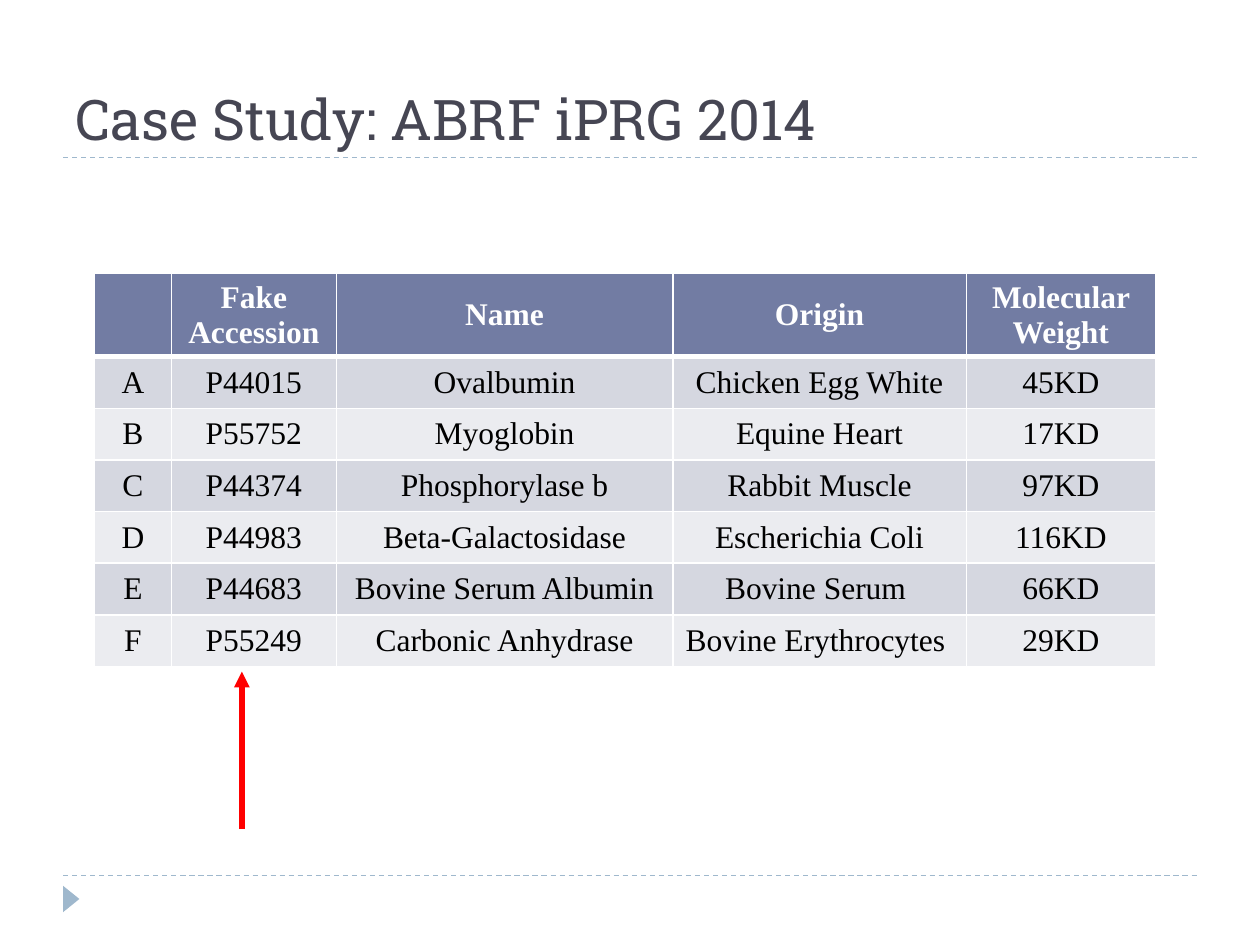
"""Builds the case study slide with its protein table."""
import pptx
import pptx.util
import pptx.dml.color
import pptx.enum.dml
import pptx.enum.shapes
import pptx.enum.text
import pptx.oxml.ns
import lxml.etree

Inches, Pt = pptx.util.Inches, pptx.util.Pt
qn = pptx.oxml.ns.qn
PP, MSO = pptx.enum.text.PP_ALIGN, pptx.enum.text.MSO_ANCHOR


def rgb(value):
    return pptx.dml.color.RGBColor.from_string(value)


def write(tf, text, size=18, font="Times New Roman", color="000000", bold=False, align=PP.CENTER):
    tf.word_wrap = True
    p = tf.paragraphs[0]
    p.alignment = align
    r = p.add_run()
    r.text = text
    r.font.size = Pt(size)
    r.font.name = font
    r.font.bold = bold
    r.font.color.rgb = rgb(color)


prs = pptx.Presentation()
prs.slide_width, prs.slide_height = Inches(10), Inches(7.5)
s = prs.slides.add_slide(prs.slide_layouts[6])

lines = [
    (0.5, 6.95, 9.5, 6.95, "9FB8CD", 0.75),
    (0.5, 1.25, 9.5, 1.25, "9FB8CD", 0.75),
    (1.92, 6.58, 1.92, 5.33, "FF0000", 3),
]
for x1, y1, x2, y2, color, width in lines:
    cn = s.shapes.add_connector(
        pptx.enum.shapes.MSO_CONNECTOR.STRAIGHT, Inches(x1), Inches(y1), Inches(x2), Inches(y2)
    )
    cn.line.color.rgb = rgb(color)
    cn.line.width = Pt(width)
    spPr = cn._element.spPr
    if y1 == y2:
        cn.line.dash_style = pptx.enum.dml.MSO_LINE.DASH
    else:
        lxml.etree.SubElement(spPr.find(qn("a:ln")), qn("a:tailEnd"), type="triangle")
    lxml.etree.SubElement(spPr, qn("a:effectLst"))

sp = s.shapes.add_shape(
    pptx.enum.shapes.MSO_SHAPE.ISOSCELES_TRIANGLE, Inches(0.46), Inches(7.07), Inches(0.21), Inches(0.13)
)
sp.rotation = 90
sp.shadow.inherit = False
sp.fill.solid()
sp.fill.fore_color.rgb = rgb("9FB8CD")
sp.line.fill.background()

title = s.shapes.add_textbox(Inches(0.5), Inches(0.17), Inches(9), Inches(1.08))
title.text_frame.vertical_anchor = MSO.BOTTOM
write(title.text_frame, "Case Study: ABRF iPRG 2014", size=32, font="Roboto Slab", color="464653", align=PP.LEFT)

rows = [
    ("", "Fake Accession", "Name", "Origin", "Molecular Weight"),
    ("A", "P44015", "Ovalbumin", "Chicken Egg White", "45KD"),
    ("B", "P55752", "Myoglobin", "Equine Heart", "17KD"),
    ("C", "P44374", "Phosphorylase b", "Rabbit Muscle", "97KD"),
    ("D", "P44983", "Beta-Galactosidase", "Escherichia Coli", "116KD"),
    ("E", "P44683", "Bovine Serum Albumin", "Bovine Serum ", "66KD"),
    ("F", "P55249", "Carbonic Anhydrase", "Bovine Erythrocytes ", "29KD"),
]
widths = [0.61, 1.31, 2.67, 2.33, 1.5]
table = s.shapes.add_table(
    len(rows), len(widths), Inches(0.75), Inches(2.17), Inches(sum(widths)), Inches(3.1)
).table
for column, width in zip(table.columns, widths):
    column.width = Inches(width)

for i, values in enumerate(rows):
    header = i == 0
    table.rows[i].height = Inches(0.64 if header else 0.41)
    fill = "727CA3" if header else ("EBECF0", "D5D7E0")[i % 2]
    for j, text in enumerate(values):
        cell = table.cell(i, j)
        cell.vertical_anchor = MSO.MIDDLE
        cell.margin_top = cell.margin_bottom = Inches(0.03)
        if text:
            write(cell.text_frame, text, color="FFFFFF" if header else "000000", bold=header)
        tcPr = cell._tc.get_or_add_tcPr()
        for side in ("L", "R", "T", "B"):
            thick = (header and side == "B") or (i == 1 and side == "T")
            ln = lxml.etree.SubElement(tcPr, qn("a:ln" + side), w=str(Pt(3 if thick else 1)))
            solid = lxml.etree.SubElement(ln, qn("a:solidFill"))
            lxml.etree.SubElement(solid, qn("a:srgbClr"), val="FFFFFF")
        cell.fill.solid()
        cell.fill.fore_color.rgb = rgb(fill)

prs.save("out.pptx")
